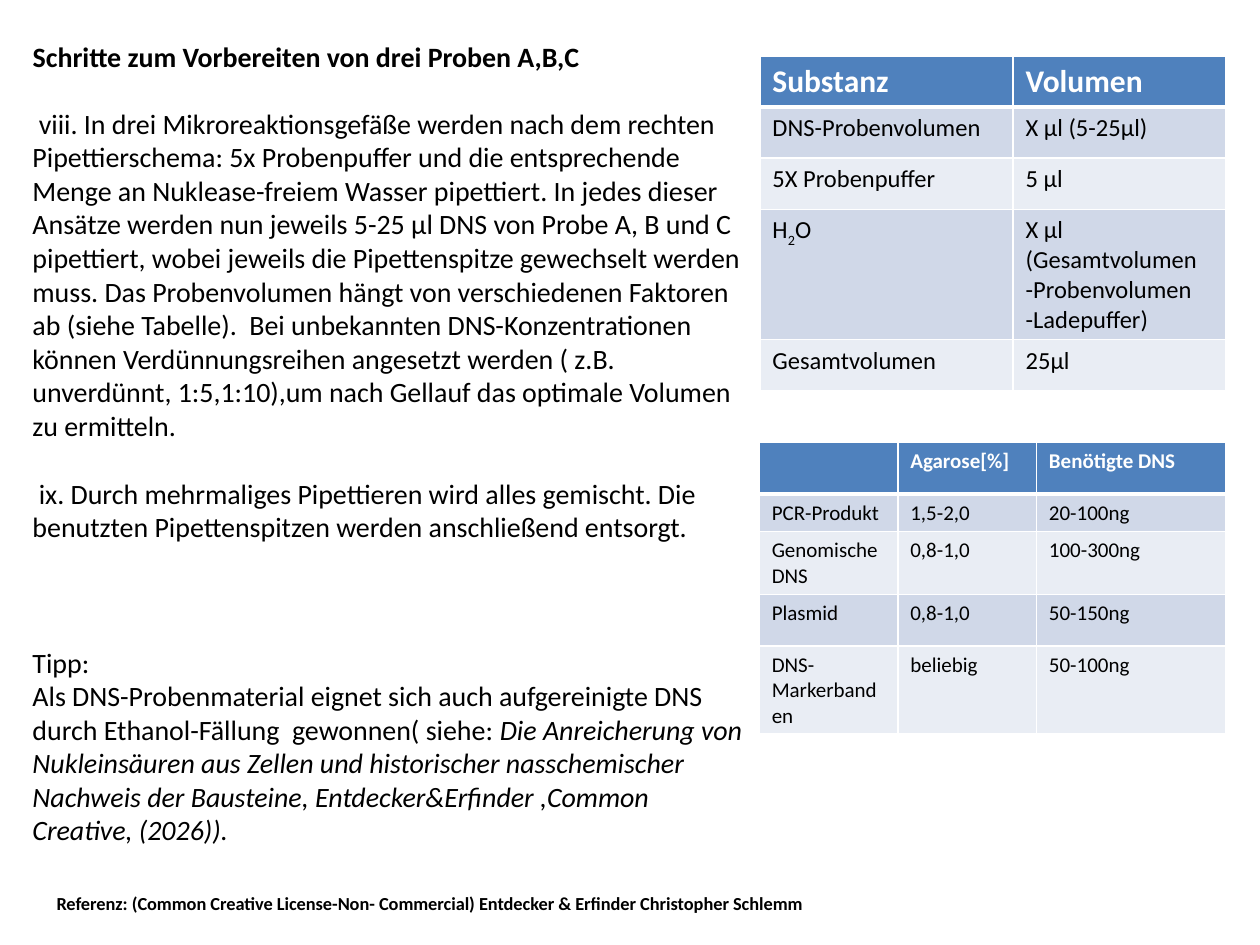
from dataclasses import dataclass

from lxml.etree import SubElement
from pptx import Presentation
from pptx.dml.color import RGBColor
from pptx.enum.text import MSO_ANCHOR, MSO_AUTO_SIZE, PP_ALIGN
from pptx.oxml.ns import qn
from pptx.util import Pt


@dataclass(frozen=True)
class Theme:
    font: str = "Calibri"
    black: str = "000000"
    white: str = "FFFFFF"
    header: str = "4F81BD"
    bands: tuple = ("D0D8E8", "E9EDF4")
    body: float = 16
    table_header: float = 18
    table_body: float = 14
    small_table: float = 12
    reference: float = 10.5
    line_gap: float = 19.4


THEME = Theme()

TITLE = "Schritte zum Vorbereiten von drei Proben A,B,C"
STEPS = [
    (0, [" viii. In drei Mikroreaktionsgefäße werden nach dem rechten Pipettierschema: "
         "5x Probenpuffer und die entsprechende Menge an Nuklease-freiem Wasser pipettiert. "
         "In jedes dieser Ansätze werden nun jeweils 5-25 µl DNS von Probe A, B und C "
         "pipettiert, wobei jeweils die Pipettenspitze gewechselt werden muss. "
         "Das Probenvolumen hängt von verschiedenen Faktoren ab (siehe Tabelle).  "
         "Bei unbekannten DNS-Konzentrationen können Verdünnungsreihen angesetzt werden "
         "( z.B. unverdünnt, 1:5,1:10),um nach Gellauf das optimale Volumen zu ermitteln."]),
    (1, [" ix. Durch mehrmaliges Pipettieren wird alles gemischt. "
         "Die benutzten Pipettenspitzen werden anschließend entsorgt."]),
    (3, ["Tipp:"]),
    (0, ["Als DNS-Probenmaterial eignet sich auch aufgereinigte DNS durch Ethanol-Fällung  "
         "gewonnen( siehe: ",
         "Die Anreicherung von Nukleinsäuren aus Zellen und historischer nasschemischer "
         "Nachweis der Bausteine, Entdecker&Erfinder ,Common Creative, (2026))."]),
]
REFERENCE = ("Referenz: (Common Creative License-Non- Commercial) "
             "Entdecker & Erfinder Christopher Schlemm")
VOLUMES = [
    ["Substanz", "Volumen"],
    ["DNS-Probenvolumen", "X µl (5-25µl)"],
    ["5X Probenpuffer", "5 µl"],
    ["H2O", "X µl\n(Gesamtvolumen\n-Probenvolumen\n-Ladepuffer)"],
    ["Gesamtvolumen", "25µl"],
]
AMOUNTS = [
    ["", "Agarose[%]", "Benötigte DNS"],
    ["PCR-Produkt", "1,5-2,0", "20-100ng"],
    ["Genomische DNS", "0,8-1,0", "100-300ng"],
    ["Plasmid", "0,8-1,0", "50-150ng"],
    ["DNS-Markerbanden", "beliebig", "50-100ng"],
]


def style_font(font, size, color=THEME.black, bold=False):
    font.name = THEME.font
    font.size = Pt(size)
    font.bold = bold
    font.color.rgb = RGBColor.from_string(color)


def style_para(para, size, color=THEME.black, bold=False):
    style_font(para.font, size, color, bold)
    for span in para.runs:
        style_font(span.font, size, color, bold)


def place(shape, left, top, width, height):
    shape.left, shape.top = Pt(left), Pt(top)
    shape.width, shape.height = Pt(width), Pt(height)


def add_title(page, text, *area):
    title = page.shapes.title
    place(title, *area)
    frame = title.text_frame
    frame.text = text
    frame.word_wrap = True
    frame.auto_size = MSO_AUTO_SIZE.NONE
    frame.vertical_anchor = MSO_ANCHOR.TOP
    para = frame.paragraphs[0]
    para.alignment = PP_ALIGN.LEFT
    style_para(para, THEME.body, bold=True)


def add_text_box(page, left, top, width, height):
    box = page.shapes.add_textbox(Pt(left), Pt(top), Pt(width), Pt(height))
    box.text_frame.word_wrap = True
    box.text_frame.auto_size = MSO_AUTO_SIZE.SHAPE_TO_FIT_TEXT
    return box.text_frame


def add_steps(page, steps, *area):
    frame = add_text_box(page, *area)
    for index, (gap_lines, spans) in enumerate(steps):
        para = frame.add_paragraph() if index else frame.paragraphs[0]
        para.space_before = Pt(gap_lines * THEME.line_gap)
        for text in spans:
            para.add_run().text = text
        style_para(para, THEME.body)
        for span in para.runs[1:]:
            span.font.italic = True


def add_reference(page, text, *area):
    frame = add_text_box(page, *area)
    frame.text = text
    style_para(frame.paragraphs[0], THEME.reference, bold=True)


def set_borders(cell, top=1, bottom=1):
    properties = cell._tc.get_or_add_tcPr()
    for side, width in (("L", 1), ("R", 1), ("T", top), ("B", bottom)):
        line = SubElement(properties, qn(f"a:ln{side}"), w=str(Pt(width)))
        fill = SubElement(line, qn("a:solidFill"))
        SubElement(fill, qn("a:srgbClr"), val=THEME.white)


def add_table(page, rows, left, top, widths, heights, header_size, body_size):
    frame = page.shapes.add_table(len(rows), len(widths), Pt(left), Pt(top),
                                  Pt(sum(widths)), Pt(sum(heights)))
    table = frame.table
    table.horz_banding = False
    for column, width in zip(table.columns, widths):
        column.width = Pt(width)
    for number, (row, height, texts) in enumerate(zip(table.rows, heights, rows)):
        row.height = Pt(height)
        is_header = number == 0
        fill = THEME.header if is_header else THEME.bands[(number - 1) % 2]
        color = THEME.white if is_header else THEME.black
        size = header_size if is_header else body_size
        for cell, text in zip(row.cells, texts):
            set_borders(cell, top=3 if number == 1 else 1, bottom=3 if is_header else 1)
            cell.fill.solid()
            cell.fill.fore_color.rgb = RGBColor.from_string(fill)
            cell.text_frame.text = text
            for para in cell.text_frame.paragraphs:
                style_para(para, size, color, is_header)
    return table


def set_formula(cell, parts):
    para = cell.text_frame.paragraphs[0]
    para.text = ""
    for text, baseline in parts:
        span = para.add_run()
        span.text = text
        style_font(span.font, THEME.table_body)
        if baseline:
            span.font._element.set("baseline", str(baseline))


def main():
    deck = Presentation()
    deck.slide_width, deck.slide_height = Pt(720), Pt(540)
    page = deck.slides.add_slide(deck.slide_layouts[5])

    add_title(page, TITLE, 11.5, 18.7, 422.6, 27)
    add_steps(page, STEPS, 11.5, 57.2, 422.6, 433.8)

    volumes = add_table(page, VOLUMES, 434.2, 32, [144.7, 121.7], [29.2] * 5,
                        THEME.table_header, THEME.table_body)
    set_formula(volumes.cell(3, 0), [("H", 0), ("2", -25000), ("O", 0)])
    add_table(page, AMOUNTS, 433.8, 253, [79.2, 79.2, 108],
              [29.2, 20, 29.2, 29.2, 29.2], THEME.small_table, THEME.small_table)

    add_reference(page, REFERENCE, 25.2, 506.2, 550, 20)
    deck.save("out.pptx")


if __name__ == "__main__":
    main()
